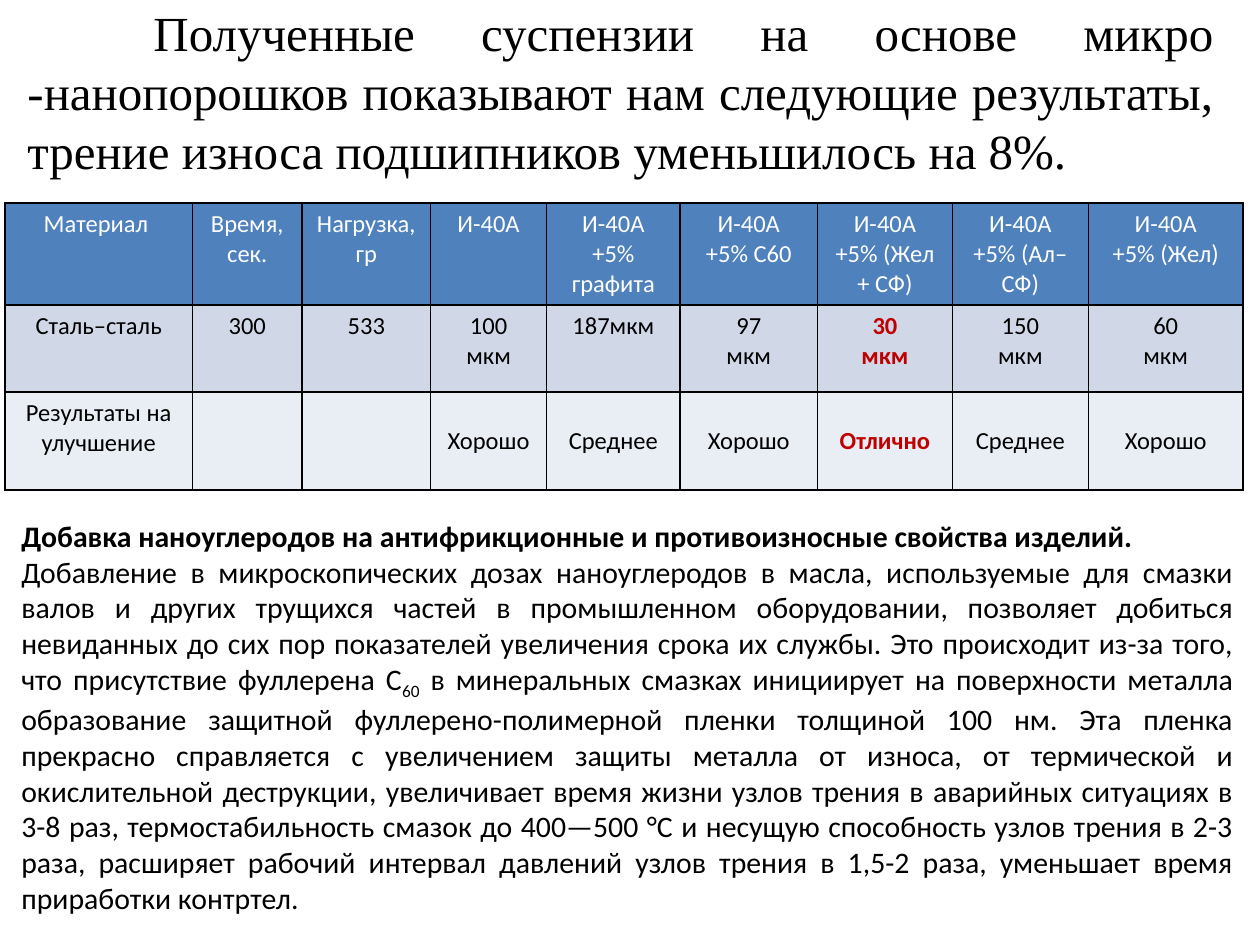
"""Build a slide on bearing wear with nanopowder suspensions in oil."""
from dataclasses import dataclass

from lxml import etree
from pptx import Presentation
from pptx.dml.color import RGBColor
from pptx.enum.text import MSO_ANCHOR, MSO_AUTO_SIZE, PP_ALIGN
from pptx.oxml.ns import qn
from pptx.slide import Slide
from pptx.util import Cm, Pt

TOP, MIDDLE = MSO_ANCHOR.TOP, MSO_ANCHOR.MIDDLE
CENTER, JUSTIFY = PP_ALIGN.CENTER, PP_ALIGN.JUSTIFY
FIT_SHAPE, NO_FIT = MSO_AUTO_SIZE.SHAPE_TO_FIT_TEXT, MSO_AUTO_SIZE.NONE
TITLE_ONLY = 5


@dataclass(frozen=True)
class Theme:
    """Colours, fonts and type sizes of the slide."""

    ink: str = "000000"
    header_ink: str = "FFFFFF"
    best: str = "C00000"
    header_fill: str = "4F81BD"
    wear_fill: str = "D0D8E8"
    rating_fill: str = "E9EDF4"
    title_font: str = "Times New Roman"
    body_font: str = "Calibri"
    title_size: float = 28
    table_size: float = 14
    body_size: float = 17
    border_width: float = 1


@dataclass(frozen=True)
class Column:
    """One table column: width in centimetres and its three cells."""

    width: float
    header: str
    wear: str
    rating: str = ""
    best: bool = False


@dataclass(frozen=True)
class Row:
    """Height in centimetres and look of one table row."""

    height: float
    fill: str
    ink: str


THEME = Theme()
COLUMNS = (
    Column(3.78, "Материал ", "Сталь–сталь", "Результаты на улучшение"),
    Column(2.21, "Время, сек.", "300"),
    Column(2.59, "Нагрузка, гр", "533"),
    Column(2.34, "И-40А", "100\nмкм", "Хорошо"),
    Column(2.69, "И-40А\n+5% графита", "187мкм", "Среднее"),
    Column(2.77, "И-40А\n+5% C60", "97\nмкм", "Хорошо"),
    Column(2.72, "И-40А\n+5% (Жел + СФ)", "30\nмкм", "Отлично", best=True),
    Column(2.74, "И-40А\n+5% (Ал–СФ)", "150\nмкм", "Среднее"),
    Column(3.12, "И-40А\n+5% (Жел)", "60\nмкм", "Хорошо"),
)
ROWS = (
    Row(2.06, THEME.header_fill, THEME.header_ink),
    Row(1.75, THEME.wear_fill, THEME.ink),
    Row(1.98, THEME.rating_fill, THEME.ink),
)
TITLE = (
    "Полученные суспензии на основе микро -нанопорошков показывают нам "
    "следующие результаты, трение износа подшипников уменьшилось на 8%. "
)
HEADING = "Добавка наноуглеродов на антифрикционные и противоизносные свойства изделий."
BEFORE_INDEX = (
    "Добавление в микроскопических дозах наноуглеродов в масла, используемые для "
    "смазки валов и других трущихся частей в промышленном оборудовании, позволяет "
    "добиться невиданных до сих пор показателей увеличения срока их службы. Это "
    "происходит из-за того, что присутствие фуллерена С"
)
INDEX = "60"
AFTER_INDEX = (
    " в минеральных смазках инициирует на поверхности металла образование защитной "
    "фуллерено-полимерной пленки толщиной 100 нм. Эта пленка прекрасно справляется с "
    "увеличением защиты металла от износа, от термической и окислительной деструкции, "
    "увеличивает время жизни узлов трения в аварийных ситуациях в 3-8 раз, "
    "термостабильность смазок до 400—500 °C и несущую способность узлов трения в 2-3 "
    "раза, расширяет рабочий интервал давлений узлов трения в 1,5-2 раза, уменьшает "
    "время приработки контртел."
)


def format_para(para, align, name: str, size: float, ink: str, bold: bool = False) -> None:
    """Set alignment and font of a paragraph."""
    para.alignment = align
    para.font.name = name
    para.font.size = Pt(size)
    para.font.bold = bold
    para.font.color.rgb = RGBColor.from_string(ink)


def add_title(page: Slide) -> None:
    """Fill and place the title, with an indented first line."""
    box = page.shapes.title
    box.left, box.top, box.width, box.height = Cm(0.3), Cm(-0.08), Cm(24.41), Cm(3.4)
    frame = box.text_frame
    frame.text = TITLE
    frame.vertical_anchor = TOP
    frame.auto_size = NO_FIT
    para = frame.paragraphs[0]
    format_para(para, JUSTIFY, THEME.title_font, THEME.title_size, THEME.ink)
    para.space_before = Pt(0.2 * THEME.title_size)
    para._p.get_or_add_pPr().set("indent", str(Cm(2.54)))


def add_borders(cell) -> None:
    """Draw a solid line on all four sides of a cell."""
    properties = cell._tc.get_or_add_tcPr()
    for position, side in enumerate(("a:lnL", "a:lnR", "a:lnT", "a:lnB")):
        line = etree.Element(qn(side), w=str(Pt(THEME.border_width)))
        fill = etree.SubElement(line, qn("a:solidFill"))
        etree.SubElement(fill, qn("a:srgbClr"), val=THEME.ink)
        properties.insert(position, line)


def fill_cell(cell, text: str, row: Row, best: bool, anchor) -> None:
    """Write and format one table cell."""
    cell.text = text
    cell.vertical_anchor = anchor
    cell.fill.solid()
    cell.fill.fore_color.rgb = RGBColor.from_string(row.fill)
    ink = THEME.best if best else row.ink
    for para in cell.text_frame.paragraphs:
        format_para(para, CENTER, THEME.body_font, THEME.table_size, ink, best)
    add_borders(cell)


def add_results(page: Slide) -> None:
    """Add the table of wear results."""
    width = Cm(sum(column.width for column in COLUMNS))
    height = Cm(sum(row.height for row in ROWS))
    table = page.shapes.add_table(
        len(ROWS), len(COLUMNS), Cm(0.1), Cm(4.09), width, height
    ).table
    table.horz_banding = False
    for y, row in enumerate(ROWS):
        table.rows[y].height = Cm(row.height)
    for x, column in enumerate(COLUMNS):
        table.columns[x].width = Cm(column.width)
        for y, text in enumerate((column.header, column.wear, column.rating)):
            anchor = MIDDLE if y == 2 and x > 0 else TOP
            fill_cell(table.cell(y, x), text, ROWS[y], column.best and y > 0, anchor)


def add_explanation(page: Slide) -> None:
    """Add the bold heading and the paragraph below the table."""
    frame = page.shapes.add_textbox(Cm(0.18), Cm(10.31), Cm(24.94), Cm(8.26)).text_frame
    frame.word_wrap = True
    frame.auto_size = FIT_SHAPE
    heading, body = frame.paragraphs[0], frame.add_paragraph()
    heading.text = HEADING
    for text in (BEFORE_INDEX, INDEX, AFTER_INDEX):
        span = body.add_run()
        span.text = text
        if text == INDEX:
            span._r.get_or_add_rPr().set("baseline", "-25000")
    for para, bold in ((heading, True), (body, False)):
        format_para(para, JUSTIFY, THEME.body_font, THEME.body_size, THEME.ink, bold)


def main() -> None:
    """Build and save the deck."""
    deck = Presentation()
    deck.slide_width, deck.slide_height = Cm(25.4), Cm(19.05)
    page = deck.slides.add_slide(deck.slide_layouts[TITLE_ONLY])
    add_title(page)
    add_results(page)
    add_explanation(page)
    deck.save("out.pptx")


if __name__ == "__main__":
    main()
